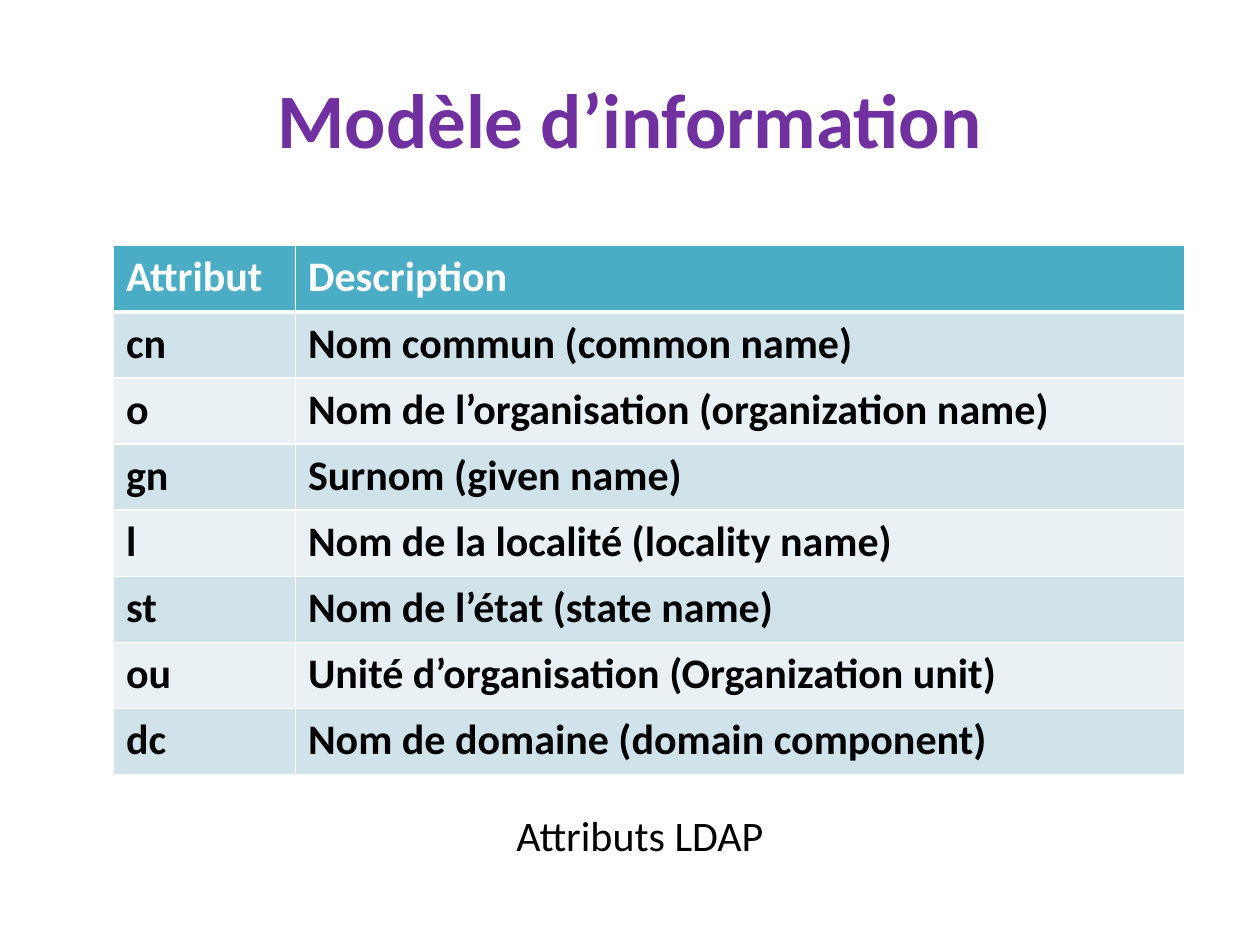
from lxml import etree
from pptx import Presentation
from pptx import util as u
from pptx.dml.color import RGBColor
from pptx.enum import text
from pptx.oxml import ns

PURPLE = RGBColor(0x70, 0x30, 0xA0)
TEAL = RGBColor(0x4B, 0xAC, 0xC6)
BAND_DARK = RGBColor(0xD0, 0xE3, 0xEA)
BAND_LIGHT = RGBColor(0xE9, 0xF1, 0xF5)
WHITE = RGBColor(0xFF, 0xFF, 0xFF)
BLACK = RGBColor(0, 0, 0)

FONT = "Calibri"
WIDTH, HEIGHT = u.Inches(10), u.Inches(7.5)
NAME_SHARE = 0.17
ATTRIBUTES = [
    ("Attribut", "Description"),
    ("cn", "Nom commun (common name)"),
    ("o", "Nom de l’organisation (organization name)"),
    ("gn", "Surnom (given name)"),
    ("l", "Nom de la localité (locality name)"),
    ("st", "Nom de l’état (state name)"),
    ("ou", "Unité d’organisation (Organization unit)"),
    ("dc", "Nom de domaine (domain component)"),
]


def area(left, top, width, height):
    return (int(left * WIDTH), int(top * HEIGHT),
            int(width * WIDTH), int(height * HEIGHT))


def style(para, size, color, bold=False):
    font = para.font
    font.name = FONT
    font.size = u.Pt(size)
    font.bold = bold
    font.color.rgb = color


def add_title(page, place, words):
    frame = page.shapes.add_textbox(*place).text_frame
    frame.word_wrap = True
    frame.vertical_anchor = text.MSO_ANCHOR.MIDDLE
    para = frame.paragraphs[0]
    para.text = words
    para.alignment = text.PP_ALIGN.CENTER
    style(para, 44, PURPLE, bold=True)


def set_borders(cell, top, bottom):
    properties = cell._tc.get_or_add_tcPr()
    for side, points in (("L", 1), ("R", 1), ("T", top), ("B", bottom)):
        line = etree.SubElement(properties, ns.qn(f"a:ln{side}"), w=str(u.Pt(points)))
        fill = etree.SubElement(line, ns.qn("a:solidFill"))
        etree.SubElement(fill, ns.qn("a:srgbClr"), val=str(WHITE))


def add_attribute_table(page, place, rows):
    left, top, width, height = place
    table = page.shapes.add_table(len(rows), 2, left, top, width, height).table
    table.columns[0].width = int(width * NAME_SHARE)
    table.columns[1].width = width - table.columns[0].width
    for index, row in enumerate(rows):
        is_header = index == 0
        band = BAND_DARK if index % 2 else BAND_LIGHT
        for column, words in enumerate(row):
            cell = table.cell(index, column)
            set_borders(cell, top=3 if index == 1 else 1, bottom=3 if is_header else 1)
            cell.fill.solid()
            cell.fill.fore_color.rgb = TEAL if is_header else band
            para = cell.text_frame.paragraphs[0]
            para.text = words
            style(para, 24, WHITE if is_header else BLACK, bold=True)


def add_caption(page, place, words):
    frame = page.shapes.add_textbox(*place).text_frame
    frame.word_wrap = False
    frame.auto_size = text.MSO_AUTO_SIZE.SHAPE_TO_FIT_TEXT
    para = frame.paragraphs[0]
    para.text = words
    style(para, 24, BLACK)


def main():
    deck = Presentation()
    deck.slide_width, deck.slide_height = WIDTH, HEIGHT
    page = deck.slides.add_slide(deck.slide_layouts[6])
    add_title(page, area(0.05, 0.04, 0.9, 0.17), "Modèle d’information")
    add_attribute_table(page, area(0.09, 0.26, 0.85, 0.56), ATTRIBUTES)
    add_caption(page, area(0.4, 0.85, 0.22, 0.07), "Attributs LDAP")
    deck.save("out.pptx")


if __name__ == "__main__":
    main()
